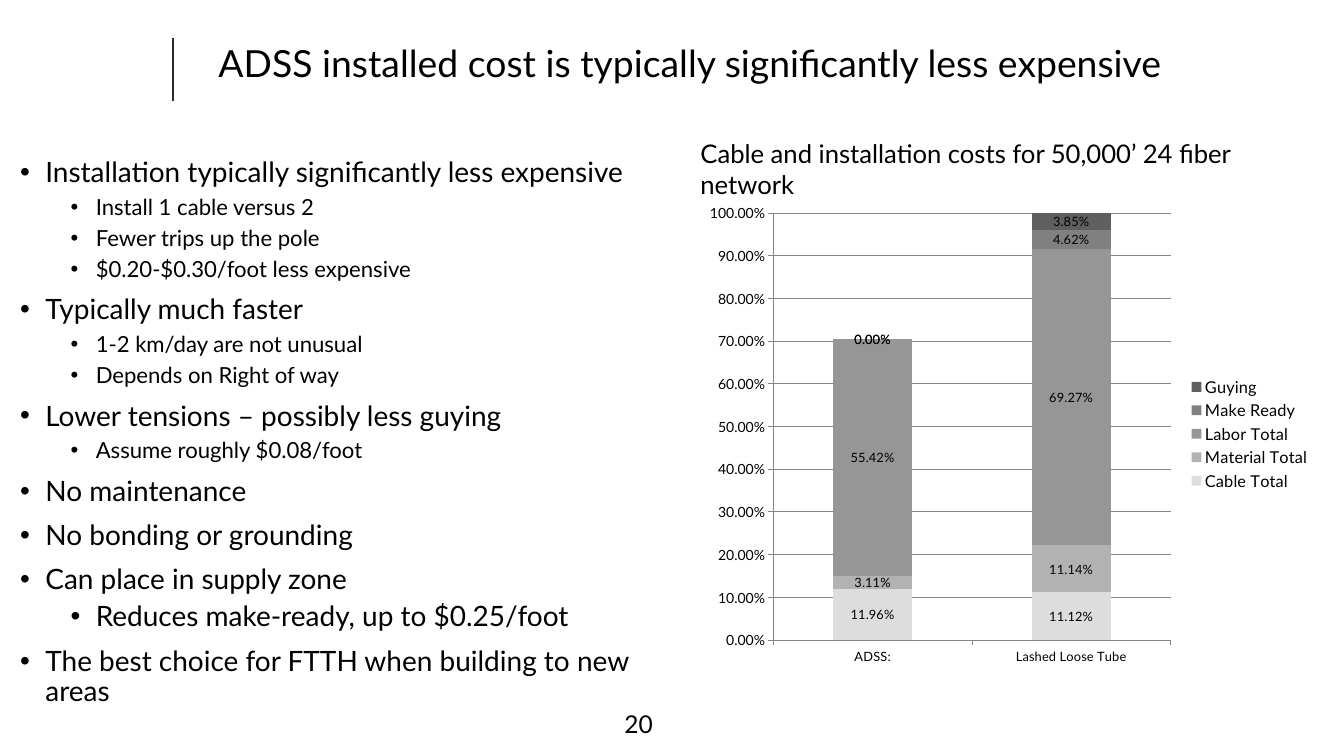
from lxml import etree
from pptx import Presentation
from pptx import util as u
from pptx.chart.data import CategoryChartData
from pptx.dml.color import RGBColor
from pptx.enum import chart as ch, shapes, text
from pptx.oxml import parse_xml
from pptx.oxml.ns import nsdecls, qn

FONT = "Lato"
BLACK, RULE, GRID = "000000", "2B2B2B", "868686"

# Level, size, wording
POINTS = [
    (0, 24, "Installation typically significantly less expensive"),
    (1, 19, "Install 1 cable versus 2"),
    (1, 19, "Fewer trips up the pole"),
    (1, 19, "$0.20-$0.30/foot less expensive"),
    (0, 24, "Typically much faster"),
    (1, 19, "1-2 km/day are not unusual"),
    (1, 19, "Depends on Right of way"),
    (0, 24, "Lower tensions – possibly less guying"),
    (1, 19, "Assume roughly $0.08/foot"),
    (0, 24, "No maintenance"),
    (0, 24, "No bonding or grounding"),
    (0, 24, "Can place in supply zone"),
    (1, 24, "Reduces make-ready, up to $0.25/foot"),
    (0, 24, "The best choice for FTTH when building to new areas"),
]
CABLES = ["ADSS:", "Lashed Loose Tube"]
COSTS = [
    ("Cable Total", (0.1196, 0.1112), "DDDDDD"),
    ("Material Total", (0.0311, 0.1114), "B2B2B2"),
    ("Labor Total", (0.5542, 0.6927), "969696"),
    ("Make Ready", (0, 0.0462), "808080"),
    ("Guying", (0, 0.0385), "5F5F5F"),
]


def rgb(value):
    return RGBColor.from_string(value)


def inches(box):
    return [u.Inches(length) for length in box]


def style(font, size):
    font.name, font.size = FONT, u.Pt(size)
    font.color.rgb = rgb(BLACK)


def set_frame(frame, inset=0.1, anchor=text.MSO_ANCHOR.TOP):
    frame.word_wrap = True
    frame.auto_size = text.MSO_AUTO_SIZE.NONE
    frame.vertical_anchor = anchor
    frame.margin_left = frame.margin_right = u.Inches(inset)
    frame.margin_top = frame.margin_bottom = u.Inches(inset / 2)


def write(paragraph, wording, size, spacing=0.9, align=text.PP_ALIGN.LEFT):
    paragraph.text = wording
    paragraph.line_spacing = spacing
    paragraph.alignment = align
    for run in paragraph.runs:
        style(run.font, size)


def add_heading(slide, box):
    left, top, width, height = box
    title = slide.shapes.title
    title.left, title.top, title.width, title.height = inches(box)
    set_frame(title.text_frame, 0.12)
    write(title.text_frame.paragraphs[0],
          "ADSS installed cost is typically significantly less expensive", 32)
    # Upright rule beside the title
    x = left - 0.42
    rule = slide.shapes.add_connector(
        shapes.MSO_CONNECTOR.STRAIGHT, *inches((x, top - 0.03, x, top + 0.72)))
    rule.line.color.rgb, rule.line.width = rgb(RULE), u.Pt(1)
    etree.SubElement(rule._element.spPr, qn("a:effectLst"))


def add_points(slide, box):
    frame = slide.shapes.add_textbox(*inches(box)).text_frame
    set_frame(frame, 0.12)
    for index, (level, size, wording) in enumerate(POINTS):
        point = frame.add_paragraph() if index else frame.paragraphs[0]
        point.level = level
        if index:
            point.space_before = u.Pt(6 if level else 12)
        write(point, wording, size)
        props = point._p.get_or_add_pPr()
        props.set("marL", str(u.Inches(0.3 + 0.6 * level)))
        props.set("indent", str(u.Inches(-0.3)))
        etree.SubElement(props, qn("a:buFont"), typeface="Arial")
        etree.SubElement(props, qn("a:buChar"), char="•")


def style_axis(axis, size):
    style(axis.tick_labels.font, size)
    axis.major_tick_mark = ch.XL_TICK_MARK.OUTSIDE
    axis.format.line.color.rgb = rgb(GRID)


def add_costs(slide, box):
    left, top, width, height = box
    # Caption above the chart
    caption = slide.shapes.add_textbox(
        *inches((left - 0.08, top - 0.72, width + 0.16, 0.47))).text_frame
    set_frame(caption)
    write(caption.paragraphs[0],
          "Cable and installation costs for 50,000’ 24 fiber network", 22, 1)

    data = CategoryChartData(number_format="0.00%")
    data.categories = CABLES
    for name, shares, _ in COSTS:
        data.add_series(name, shares)
    chart = slide.shapes.add_chart(
        ch.XL_CHART_TYPE.COLUMN_STACKED, *inches(box), data).chart
    style(chart.font, 11)
    chart.has_title = False

    # Axes
    style_axis(chart.category_axis, 11)
    scale = chart.value_axis
    style_axis(scale, 12)
    scale.minimum_scale, scale.maximum_scale, scale.major_unit = 0, 1, 0.1
    scale.tick_labels.number_format = "0.00%"
    scale.tick_labels.number_format_is_linked = False
    scale.major_gridlines.format.line.color.rgb = rgb(GRID)

    # Legend
    chart.has_legend = True
    chart.legend.position = ch.XL_LEGEND_POSITION.RIGHT
    chart.legend.include_in_layout = False
    style(chart.legend.font, 14)

    # Columns and their labels
    plot = chart.plots[0]
    plot.gap_width, plot.overlap, plot.vary_by_categories = 150, 100, False
    for series, (_, _, color) in zip(plot.series, COSTS):
        series.format.fill.solid()
        series.format.fill.fore_color.rgb = rgb(color)
        labels = series.data_labels
        labels.show_value = True
        labels.number_format, labels.number_format_is_linked = "0.00%", False
        style(labels.font, 11)

    # Plot area as shares of the chart
    area = chart._chartSpace.chart.plotArea
    for layout in area.findall(qn("c:layout")):
        area.remove(layout)
    shares = {"x": 0.12, "y": 0.04, "w": 0.64, "h": 0.89}
    modes = "".join(f'<c:{m}Mode val="edge"/>' for m in "xy")
    sizes = "".join(f'<c:{k} val="{v}"/>' for k, v in shares.items())
    area.insert(0, parse_xml(
        f'<c:layout {nsdecls("c")}><c:manualLayout>'
        f'<c:layoutTarget val="inner"/>{modes}{sizes}'
        '</c:manualLayout></c:layout>'))


def add_page_number(slide, box):
    frame = slide.shapes.add_textbox(*inches(box)).text_frame
    set_frame(frame, anchor=text.MSO_ANCHOR.BOTTOM)
    write(frame.paragraphs[0], "20", 21, align=text.PP_ALIGN.RIGHT)


def main():
    deck = Presentation()
    deck.slide_width, deck.slide_height = inches((16, 9))
    slide = deck.slides.add_slide(deck.slide_layouts.get_by_name("Title Only"))
    add_heading(slide, (2.48, 0.48, 12.42, 0.81))
    add_points(slide, (0.12, 1.83, 8.12, 6.5))
    add_costs(slide, (8.32, 2.31, 7.39, 5.71))
    add_page_number(slide, (7.11, 8.35, 0.76, 0.5))
    deck.save("out.pptx")


if __name__ == "__main__":
    main()
